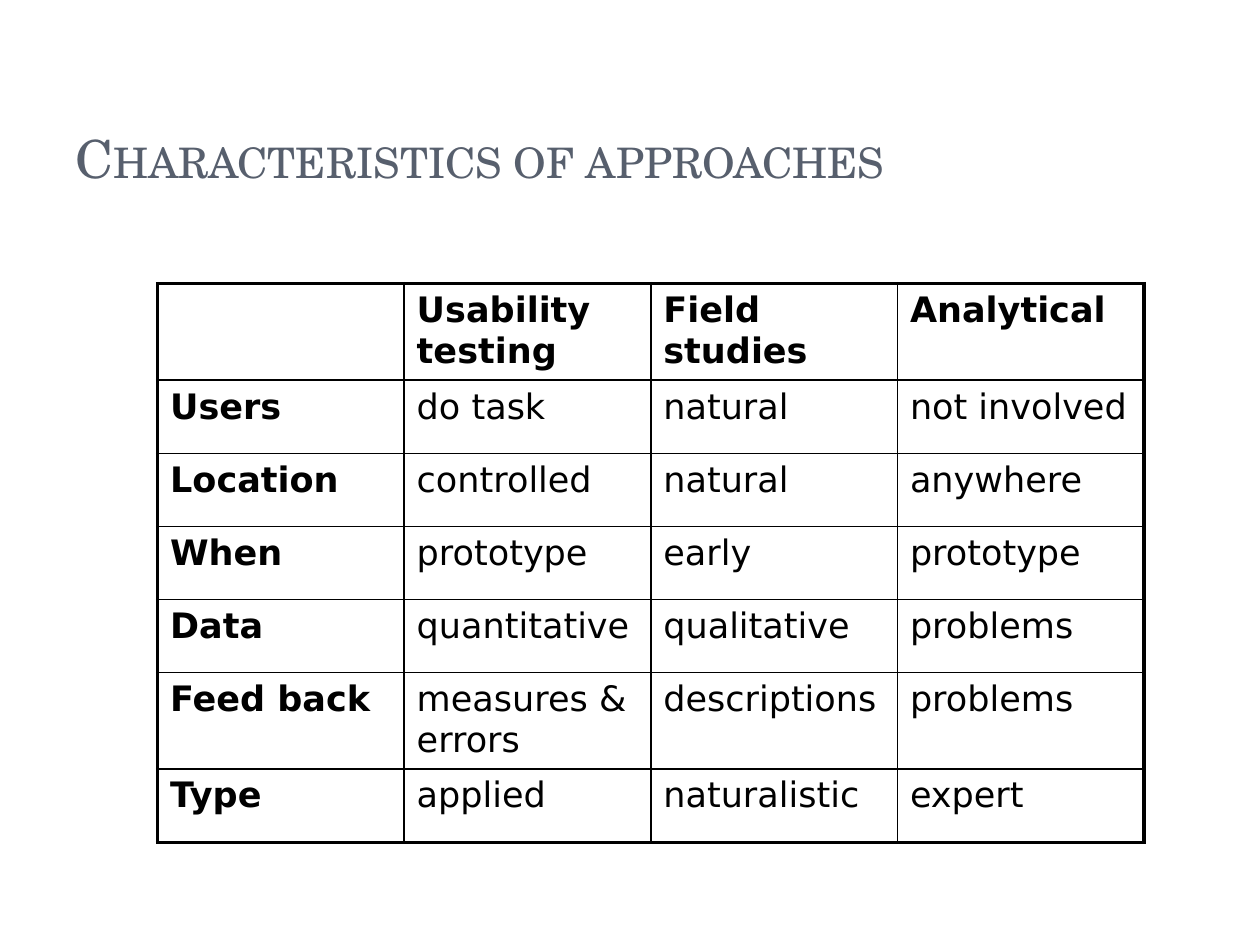
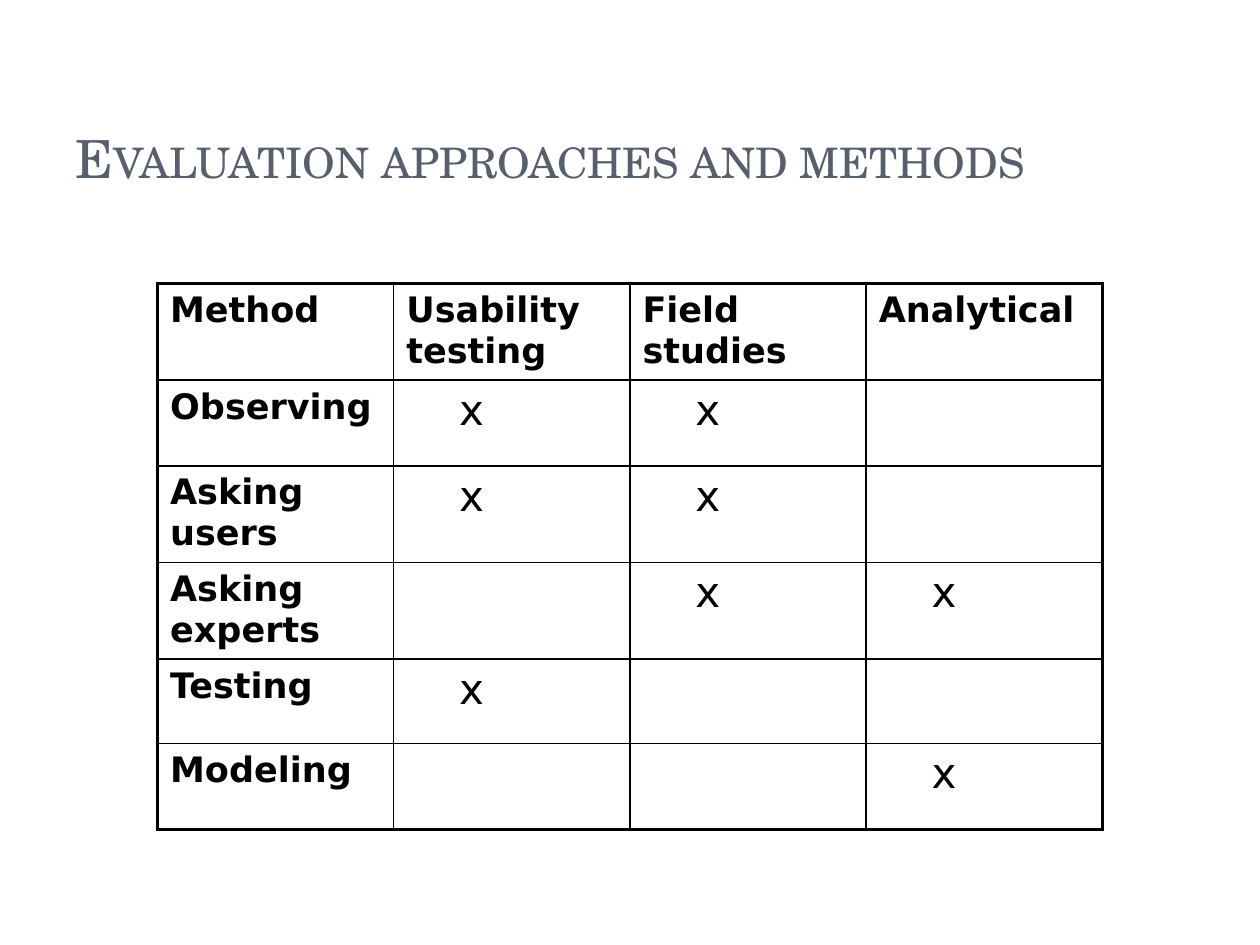
from pptx import Presentation
from pptx.dml.color import RGBColor
from pptx.enum.text import MSO_ANCHOR
from pptx.oxml.ns import qn
from pptx.util import Inches, Pt
from lxml import etree

BOTTOM = MSO_ANCHOR.BOTTOM
SLATE = RGBColor(0x57, 0x5F, 0x6D)
BLACK = RGBColor(0x00, 0x00, 0x00)
TITLE_FONT = "TeX Gyre Schola"
TABLE_FONT = "DejaVu Sans"
OUTER, INNER = Pt(2.25), Pt(1)
MARK = "x"

# Title, table width, row heights and cell texts of each slide
SLIDES = [
    ("Characteristics of approaches", 7.83,
     [0.75, 0.58, 0.58, 0.58, 0.58, 0.75, 0.58],
     [["", "Usability testing", "Field studies", "Analytical"],
      ["Users", "do task", "natural", "not involved"],
      ["Location", "controlled", "natural", "anywhere"],
      ["When", "prototype", "early", "prototype"],
      ["Data", "quantitative", "qualitative", "problems"],
      ["Feed back", "measures & errors", "descriptions", "problems"],
      ["Type", "applied", "naturalistic", "expert"]]),
    ("Evaluation approaches and methods", 7.5,
     [0.75, 0.68, 0.75, 0.75, 0.67, 0.68],
     [["Method", "Usability testing", "Field studies", "Analytical"],
      ["Observing", MARK, MARK, ""],
      ["Asking users", MARK, MARK, ""],
      ["Asking experts", "", MARK, MARK],
      ["Testing", MARK, "", ""],
      ["Modeling", "", "", MARK]]),
]


def set_font(paragraph, name, size, color, bold=False):
    paragraph.font.name = name
    paragraph.font.size = Pt(size)
    paragraph.font.bold = bold
    paragraph.font.color.rgb = color


def add_border(cell, side, width):
    properties = cell._tc.get_or_add_tcPr()
    line = etree.SubElement(properties, qn("a:ln" + side), w=str(width))
    fill = etree.SubElement(line, qn("a:solidFill"))
    etree.SubElement(fill, qn("a:srgbClr"), val=str(BLACK))


deck = Presentation()
deck.slide_width, deck.slide_height = Inches(10), Inches(7.5)

for title, table_width, heights, texts in SLIDES:
    page = deck.slides.add_slide(deck.slide_layouts[6])

    # Title in small capitals
    box = page.shapes.add_textbox(Inches(0.5), Inches(0.3), Inches(8.17), Inches(1.25))
    box.text_frame.word_wrap = True
    box.text_frame.vertical_anchor = BOTTOM
    para = box.text_frame.paragraphs[0]
    para.text = title
    set_font(para, TITLE_FONT, 30, SLATE)
    para._p.pPr.find(qn("a:defRPr")).set("cap", "small")

    # Table with equal columns
    row_count, column_count = len(texts), len(texts[0])
    table = page.shapes.add_table(
        row_count, column_count, Inches(1.25), Inches(2.25),
        Inches(table_width), Inches(sum(heights))).table
    table.first_row = False
    table.horz_banding = False
    for column in table.columns:
        column.width = Inches(table_width / column_count)

    for r, (height, row_texts) in enumerate(zip(heights, texts)):
        table.rows[r].height = Inches(height)
        for c, text in enumerate(row_texts):
            cell = table.cell(r, c)

            # Heavy frame outside, thin rules inside
            add_border(cell, "L", OUTER if c == 0 else INNER)
            add_border(cell, "R", OUTER if c == column_count - 1 else INNER)
            add_border(cell, "T", OUTER if r == 0 else INNER)
            add_border(cell, "B", OUTER if r == row_count - 1 else INNER)
            cell.fill.background()

            # Bold headings, larger indented marks
            para = cell.text_frame.paragraphs[0]
            para.text = text
            is_heading = r == 0 or c == 0
            set_font(para, TABLE_FONT, 24 if text == MARK else 20, BLACK, is_heading)
            if text == MARK:
                cell.margin_left = Inches(0.52)

deck.save("out.pptx")
